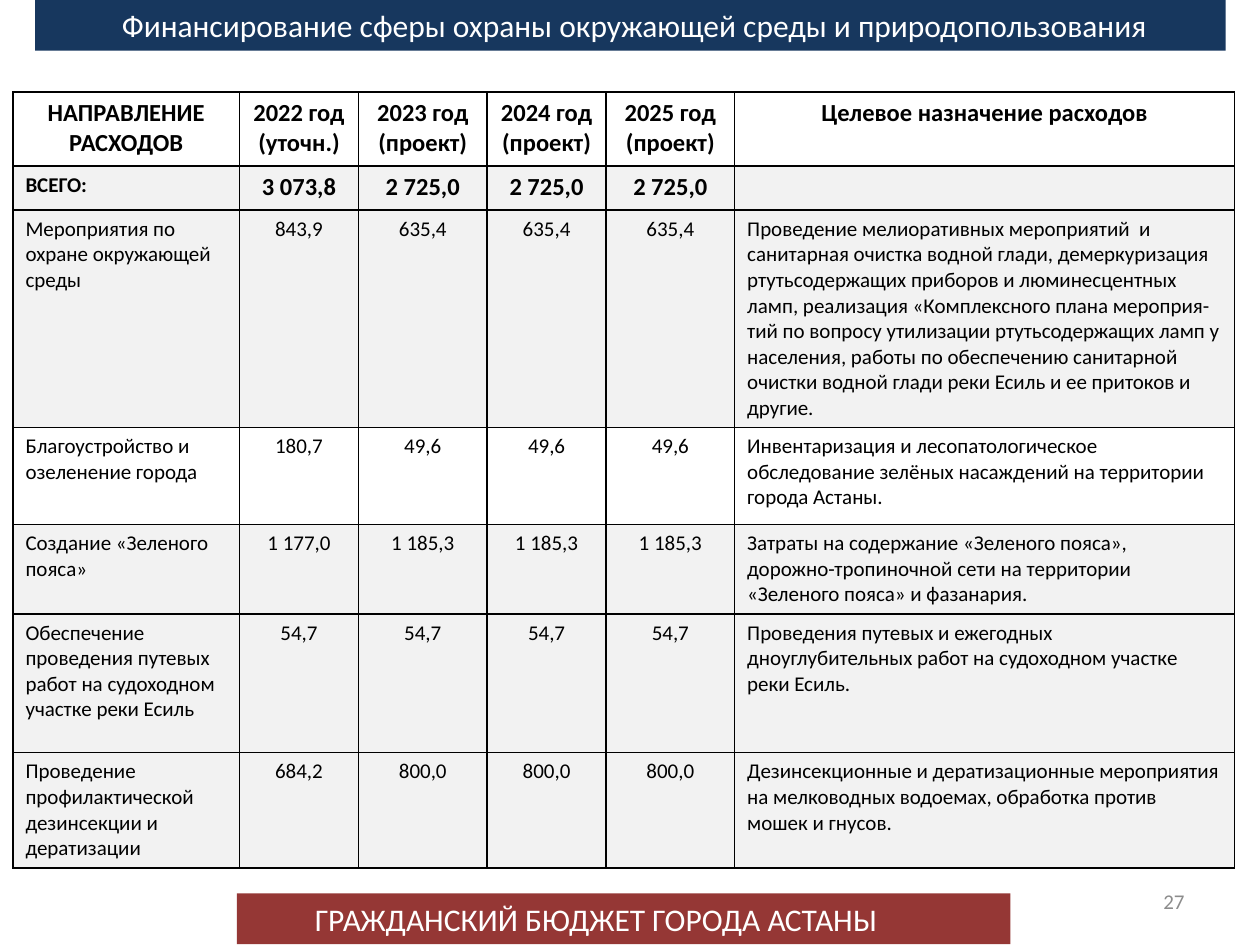
"""Build the slide on financing of environmental protection."""
import lxml.etree
import pptx
import pptx.dml.color
import pptx.enum.shapes
import pptx.enum.text
import pptx.oxml.ns
import pptx.util

Pt = pptx.util.Pt
qn = pptx.oxml.ns.qn
ALIGN = pptx.enum.text.PP_ALIGN
ANCHOR = pptx.enum.text.MSO_ANCHOR
FONT = "Calibri"
COLORS = {"navy": "17375E", "red": "953735", "band": "F2F2F2",
          "white": "FFFFFF", "black": "000000", "gray": "8C8C8C"}

TITLE = "Финансирование сферы охраны окружающей среды и природопользования"
FOOTER = "ГРАЖДАНСКИЙ БЮДЖЕТ ГОРОДА АСТАНЫ"
PAGE = "27"
ROWS = [
    ("НАПРАВЛЕНИЕ РАСХОДОВ", "2022 год\n(уточн.)", "2023 год (проект)",
     "2024 год (проект)", "2025 год\n(проект)", "Целевое назначение расходов"),
    ("ВСЕГО:", "3 073,8", "2 725,0", "2 725,0", "2 725,0", ""),
    ("Мероприятия по охране окружающей среды", "843,9", "635,4", "635,4", "635,4",
     "Проведение мелиоративных мероприятий  и санитарная очистка водной глади, "
     "демеркуризация ртутьсодержащих приборов и люминесцентных ламп, реализация "
     "«Комплексного плана мероприя-тий по вопросу утилизации ртутьсодержащих ламп у "
     "населения, работы по обеспечению санитарной очистки водной глади реки Есиль и "
     "ее притоков и другие."),
    ("Благоустройство и озеленение города", "180,7", "49,6", "49,6", "49,6",
     "Инвентаризация и лесопатологическое обследование зелёных насаждений на "
     "территории города Астаны."),
    ("Создание «Зеленого пояса»", "1 177,0", "1 185,3", "1 185,3", "1 185,3",
     "Затраты на содержание «Зеленого пояса»,\n"
     "дорожно-тропиночной сети на территории «Зеленого пояса» и фазанария."),
    ("Обеспечение проведения путевых работ на судоходном участке реки Есиль",
     "54,7", "54,7", "54,7", "54,7",
     "Проведения путевых и ежегодных дноуглубительных работ на судоходном участке "
     "реки Есиль."),
    ("Проведение профилактической дезинсекции и дератизации",
     "684,2", "800,0", "800,0", "800,0",
     "Дезинсекционные и дератизационные мероприятия на мелководных водоемах, "
     "обработка против мошек и гнусов."),
]
COL_WIDTHS = [129.5, 68, 73.5, 68, 73.5, 285.8]
ROW_HEIGHTS = [42.3, 25.1, 122.9, 55.4, 50.3, 79.4, 65.1]
PLAIN_ROWS = (0, 3)


def rgb(name):
    return pptx.dml.color.RGBColor.from_string(COLORS[name])


def write(tf, text, size=12, color="black", bold=False, align=ALIGN.LEFT, anchor=ANCHOR.TOP):
    tf.word_wrap = True
    tf.vertical_anchor = anchor
    for i, line in enumerate(text.split("\n")):
        p = tf.add_paragraph() if i else tf.paragraphs[0]
        p.alignment = align
        if not line:
            lxml.etree.SubElement(p._p, qn("a:endParaRPr"), sz=str(size * 100))
            continue
        r = p.add_run()
        r.text = line
        r.font.name, r.font.size, r.font.bold = FONT, Pt(size), bold
        r.font.color.rgb = rgb(color)


def add_bar(s, box, color):
    sp = s.shapes.add_shape(pptx.enum.shapes.MSO_SHAPE.RECTANGLE, *map(Pt, box))
    sp.shadow.inherit = False
    sp.fill.solid()
    sp.fill.fore_color.rgb = rgb(color)
    sp.line.fill.background()
    return sp


def add_text(s, box, text, **fmt):
    sp = s.shapes.add_textbox(*map(Pt, box))
    write(sp.text_frame, text, **fmt)


def add_title(s, box, bar):
    sp = s.shapes.title
    sp.left, sp.top, sp.width, sp.height = map(Pt, box)
    sp.text_frame.auto_size = pptx.enum.text.MSO_AUTO_SIZE.NONE
    write(sp.text_frame, TITLE, size=18, color="white", align=ALIGN.CENTER)
    bar.element.addnext(sp.element)


def add_borders(cell):
    tc_pr = cell._tc.get_or_add_tcPr()
    for side in ("lnL", "lnR", "lnT", "lnB"):
        ln = lxml.etree.SubElement(tc_pr, qn(f"a:{side}"), w=str(Pt(1)))
        fill = lxml.etree.SubElement(ln, qn("a:solidFill"))
        lxml.etree.SubElement(fill, qn("a:srgbClr"), val=COLORS["black"])


def add_budget_table(s, left, top):
    size = (sum(COL_WIDTHS), sum(ROW_HEIGHTS))
    table = s.shapes.add_table(len(ROWS), len(COL_WIDTHS),
                               *map(Pt, (left, top, *size))).table
    for column, width in zip(table.columns, COL_WIDTHS):
        column.width = Pt(width)
    for i, (row, height) in enumerate(zip(ROWS, ROW_HEIGHTS)):
        table.rows[i].height = Pt(height)
        for j, text in enumerate(row):
            cell = table.cell(i, j)
            number = 0 < j < len(row) - 1
            add_borders(cell)
            cell.fill.solid()
            cell.fill.fore_color.rgb = rgb("white" if i in PLAIN_ROWS else "band")
            write(cell.text_frame, text, bold=i < 2,
                  size=14 if i == 0 or (i == 1 and number) else 12,
                  align=ALIGN.CENTER if i == 0 or number else ALIGN.LEFT)


def main():
    prs = pptx.Presentation()
    prs.slide_width, prs.slide_height = Pt(720), Pt(540)
    s = prs.slides.add_slide(prs.slide_layouts[5])
    add_bar(s, (135.4, 510.5, 442, 29), "red")
    add_text(s, (172.8, 511, 380, 29), FOOTER, size=18, color="white", align=ALIGN.JUSTIFY)
    bar = add_bar(s, (20, 0, 680.4, 29), "navy")
    add_title(s, (22.3, 0, 680.4, 29), bar)
    add_budget_table(s, 7.4, 52.6)
    add_text(s, (516, 500.5, 168, 28.8), PAGE, color="gray",
             align=ALIGN.RIGHT, anchor=ANCHOR.MIDDLE)
    prs.save("out.pptx")


if __name__ == "__main__":
    main()
